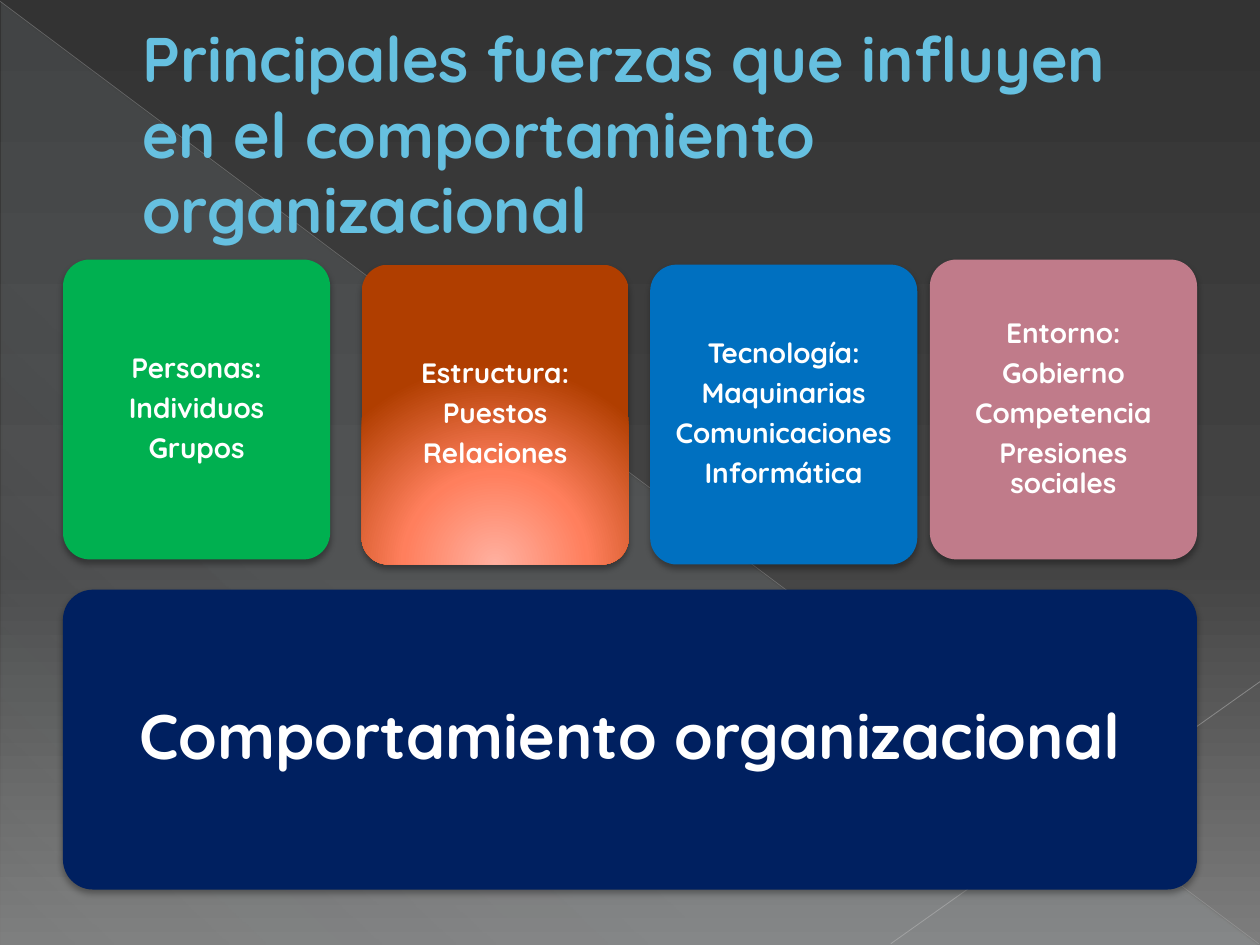
import lxml.etree
import pptx
import pptx.dml.color
import pptx.enum.shapes
import pptx.enum.text
import pptx.oxml
import pptx.oxml.ns
import pptx.util

Inches, Pt = pptx.util.Inches, pptx.util.Pt
SHAPES = pptx.enum.shapes.MSO_SHAPE
ALIGN = pptx.enum.text.PP_ALIGN
NS = pptx.oxml.ns.nsdecls("a")

WIDTH, HEIGHT = 10, 7.5
MARGIN = WIDTH / 20
CARD_WIDTH, ROW_HEIGHT = 2.12, 2.38
UPPER_ROW, LOWERED_ROW, RESULT_ROW = 2.06, 2.1, 4.68
FONT = "Quicksand"
COLORS = {
    "title": "66C0E0", "title_edge": "1F7084", "text": "FFFFFF",
    "people": "00B050", "technology": "0070C0", "environment": "C07B8A",
    "result": "002060", "shadow": "000000",
    "falling_line": "B9B9B9", "rising_line": "C1C1C1",
}
# Gradient stops: position in percent, colour, opacity in percent
BACKDROP = [(0, "333333", 100), (60, "444444", 100), (100, "7D7D7D", 100)]
VEIL = [(0, "DEF5FA", 10), (70, "DEF5FA", 8), (100, "DEF5FA", 1)]
GLOW = [(0, "FFB0A0", 100), (46, "FF7F5D", 100), (100, "B03E00", 100)]
LINEAR = '<a:lin ang="{}" scaled="0"/>'
BELOW_CENTRE = ('<a:path path="circle"><a:fillToRect l="50000" t="155000" '
                'r="50000" b="-55000"/></a:path>')

# Left edge, top edge, fill (None for the glow), lines
FORCES = [
    (MARGIN, UPPER_ROW, "people", ["Personas:", "Individuos", "Grupos"]),
    (2.87, LOWERED_ROW, None, ["Estructura:", "Puestos", "Relaciones"]),
    (5.16, LOWERED_ROW, "technology",
     ["Tecnología:", "Maquinarias", "Comunicaciones", "Informática"]),
    (WIDTH - MARGIN - CARD_WIDTH, UPPER_ROW, "environment",
     ["Entorno:", "Gobierno", "Competencia", "Presiones sociales"]),
]


def rgb(name):
    return pptx.dml.color.RGBColor.from_string(COLORS[name])


def color_xml(value, opacity):
    return f'<a:srgbClr val="{value}"><a:alpha val="{opacity * 1000}"/></a:srgbClr>'


def set_gradient(fill, element, stops, direction):
    """Replace the fill found in element by a gradient."""
    fill.solid()
    fill.fore_color.rgb = rgb("text")
    stop_list = "".join(f'<a:gs pos="{position * 1000}">{color_xml(value, opacity)}</a:gs>'
                        for position, value, opacity in stops)
    gradient = pptx.oxml.parse_xml(
        f'<a:gradFill {NS} rotWithShape="1"><a:gsLst>{stop_list}</a:gsLst>'
        f'{direction}</a:gradFill>')
    solid = element.xpath(".//a:solidFill")[0]
    solid.getparent().replace(solid, gradient)


def add_veil(slide):
    veil = slide.shapes.add_shape(SHAPES.RIGHT_TRIANGLE, Inches(0.01), Inches(0.02),
                                  Inches(WIDTH - 0.02), Inches(HEIGHT - 0.02))
    veil.shadow.inherit = False
    veil.line.fill.background()
    set_gradient(veil.fill, veil._element, VEIL, LINEAR.format(133 * 60000))


def add_faint_line(slide, start, end, color, weight, opacity):
    line = slide.shapes.add_connector(pptx.enum.shapes.MSO_CONNECTOR.STRAIGHT,
                                      *map(Inches, start + end))
    line.line.width = Pt(weight)
    line.line.color.rgb = rgb(color)
    solid = line._element.xpath(".//a:ln/a:solidFill")[0]
    solid.replace(solid[0], pptx.oxml.parse_xml(
        color_xml(COLORS[color], opacity).replace("<a:srgbClr", f"<a:srgbClr {NS}", 1)))
    lxml.etree.SubElement(line._element.spPr, pptx.oxml.ns.qn("a:effectLst"))


def style_text(frame, size, color):
    frame.word_wrap = True
    frame.vertical_anchor = pptx.enum.text.MSO_ANCHOR.MIDDLE
    for paragraph in frame.paragraphs:
        for run in paragraph.runs:
            run.font.name = FONT
            run.font.size = Pt(size)
            run.font.bold = True
            run.font.color.rgb = rgb(color)


def add_title(slide, text):
    indent = 0.53
    title = slide.shapes.add_textbox(Inches(MARGIN + indent), Inches(0.29),
                                     Inches(WIDTH - 2 * MARGIN - indent), Inches(1.53))
    frame = title.text_frame
    frame.text = text
    style_text(frame, 36, "title")
    edge = pptx.oxml.parse_xml(f'<a:ln {NS} w="{Pt(0.5)}"><a:solidFill>'
                               f'{color_xml(COLORS["title_edge"], 100)}</a:solidFill></a:ln>')
    frame.paragraphs[0].runs[0].font._element.insert(0, edge)


def add_soft_shadow(shape):
    shape.shadow.inherit = False
    shape._element.xpath("./p:spPr/a:effectLst")[0].append(pptx.oxml.parse_xml(
        f'<a:outerShdw {NS} blurRad="{Pt(3.5)}" dist="{Pt(2.2)}" dir="5400000" '
        f'rotWithShape="0">{color_xml(COLORS["shadow"], 32)}</a:outerShdw>'))


def add_card(slide, left, top, width, fill, lines, size, inset):
    card = slide.shapes.add_shape(SHAPES.ROUNDED_RECTANGLE, Inches(left), Inches(top),
                                  Inches(width), Inches(ROW_HEIGHT))
    card.adjustments[0] = 0.1
    card.line.fill.background()
    if fill:
        card.fill.solid()
        card.fill.fore_color.rgb = rgb(fill)
    else:
        set_gradient(card.fill, card._element, GLOW, BELOW_CENTRE)
    add_soft_shadow(card)
    frame = card.text_frame
    frame.margin_left = frame.margin_right = Inches(inset)
    frame.margin_top = frame.margin_bottom = Inches(inset)
    frame.text = "\n".join(lines)
    for paragraph in frame.paragraphs:
        paragraph.alignment = ALIGN.CENTER
        paragraph.line_spacing = 0.9
        paragraph.space_after = Pt(0.35 * size)
    style_text(frame, size, "text")


def main():
    deck = pptx.Presentation()
    deck.slide_width, deck.slide_height = Inches(WIDTH), Inches(HEIGHT)
    slide = deck.slides.add_slide(deck.slide_layouts[6])
    set_gradient(slide.background.fill, slide._element, BACKDROP, LINEAR.format(90 * 60000))
    add_veil(slide)
    add_faint_line(slide, (0, 0.01), (9.99, 7.49), "falling_line", 0.39, 35)
    add_faint_line(slide, (WIDTH, 5.41), (7.07, 7.49), "rising_line", 0.47, 45)
    add_title(slide, "Principales fuerzas que influyen en el comportamiento organizacional")
    add_card(slide, MARGIN, RESULT_ROW, WIDTH - 2 * MARGIN, "result",
             ["Comportamiento organizacional"], 36, 0.15)
    for left, top, fill, lines in FORCES:
        add_card(slide, left, top, CARD_WIDTH, fill, lines, 16, 0.07)
    deck.save("out.pptx")


if __name__ == "__main__":
    main()
